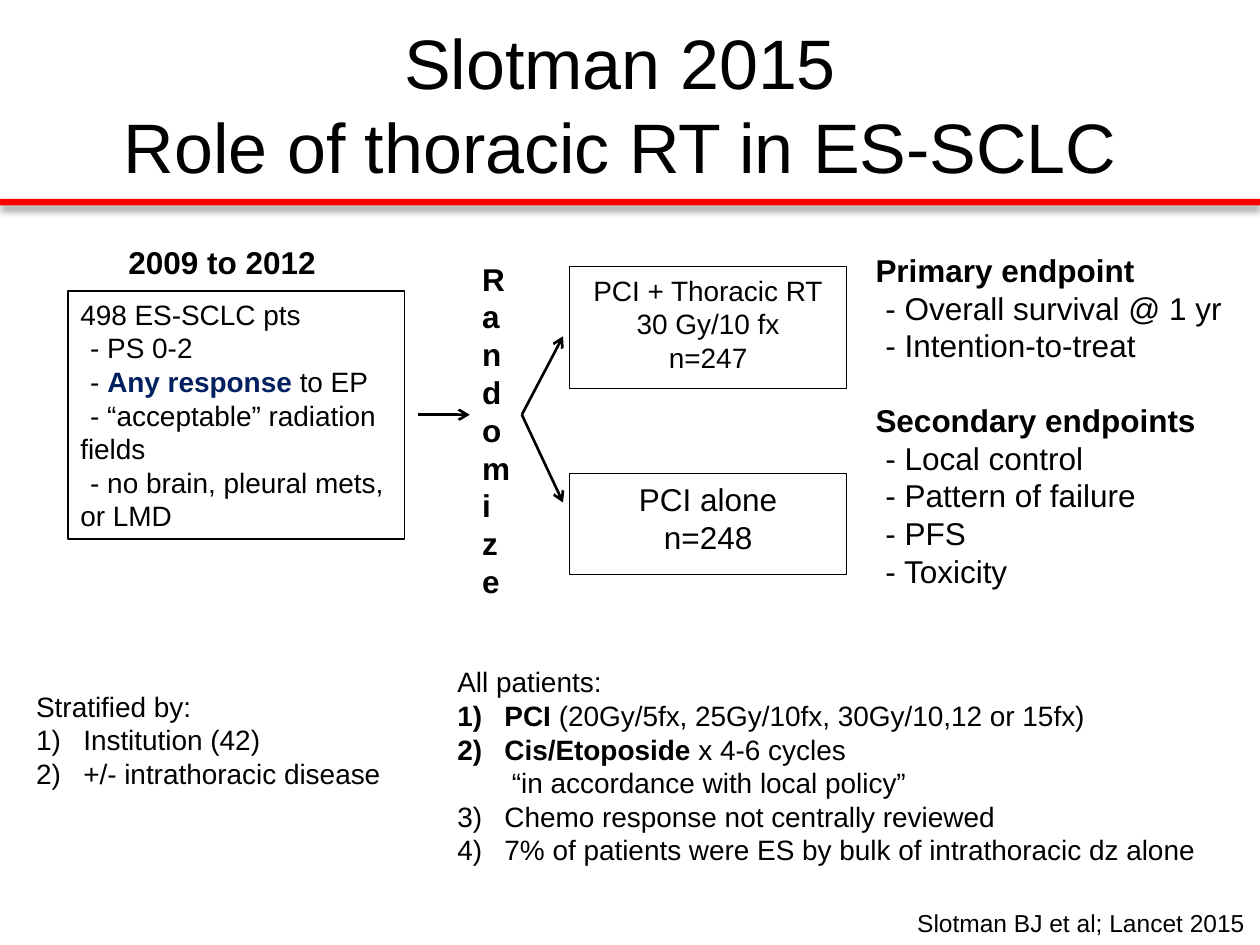
"""Build a slide on the Slotman 2015 trial of thoracic RT in ES-SCLC."""
from lxml.etree import SubElement
from pptx import Presentation
from pptx.dml.color import RGBColor
from pptx.enum.shapes import MSO_CONNECTOR as LINE, MSO_SHAPE as SHAPE
from pptx.enum.text import MSO_ANCHOR as ANCHOR, PP_ALIGN as ALIGN
from pptx.oxml.ns import qn
from pptx.util import Cm, Pt

BLACK = RGBColor(0, 0, 0)
WHITE = RGBColor(255, 255, 255)
RED = RGBColor(255, 0, 0)
NAVY = RGBColor(0, 32, 96)

BOLD = {"bold": True}
KEY = {"bold": True, "color": NAVY}
DASH = {"indent": Cm(0.2)}
QUOTE = {"indent": Cm(1.1)}
NUMBER = {"left": Cm(0.95), "indent": Cm(-0.95), "start": 1}
NUMBER_FROM_3 = {**NUMBER, "start": 3}
SECTION = {"before": Pt(21)}

TITLE = "Slotman 2015\vRole of thoracic RT in ES-SCLC"
TITLE_AREA = (1.07, 0.5, 22.86, 3.18)
RULE_AREA = (0, 4.01, 25.4, 0.13)

PATIENTS = [
    "498 ES-SCLC pts",
    (DASH, "- PS 0-2"),
    (DASH, "- ", ("Any response ", KEY), "to EP"),
    (DASH, "- “acceptable” radiation fields"),
    (DASH, "- no brain, pleural mets, or LMD"),
]
ENDPOINTS = [
    ({}, ("Primary endpoint", BOLD)),
    (DASH, "- Overall survival @ 1 yr"),
    (DASH, "- Intention-to-treat"),
    (SECTION, ("Secondary endpoints", BOLD)),
    (DASH, "- Local control"),
    (DASH, "- Pattern of failure"),
    (DASH, "- PFS"),
    (DASH, "- Toxicity"),
]
ALL_PATIENTS = [
    "All patients:",
    (NUMBER, ("PCI ", BOLD), "(20Gy/5fx, 25Gy/10fx, 30Gy/10,12 or 15fx)"),
    (NUMBER, ("Cis/Etoposide", BOLD), " x 4-6 cycles"),
    (QUOTE, "“in accordance with local policy”"),
    (NUMBER_FROM_3, "Chemo response not centrally reviewed"),
    (NUMBER_FROM_3, "7% of patients were ES by bulk of intrathoracic dz alone"),
]
STRATA = [
    "Stratified by:",
    (NUMBER, "Institution (42)"),
    (NUMBER, "+/- intrathoracic disease"),
]

FRAMED = {"line": BLACK}
ARM = {"line": BLACK, "align": ALIGN.CENTER}
BOXES = [
    ((1.37, 5.87, 6.78, 5), 16, PATIENTS, FRAMED),
    ((11.48, 5.38, 5.59, 2.46), 16, ["PCI + Thoracic RT", "30 Gy/10 fx", "n=247"], ARM),
    ((11.48, 9.55, 5.59, 2.03), 18, ["PCI alone", "n=248"], ARM),
    ((17.4, 4.93, 7.62, 7.19), 18, ENDPOINTS, {"fill": WHITE}),
    ((8.97, 13.28, 15.8, 4.37), 16, ALL_PATIENTS, {}),
    ((0.48, 13.77, 7.67, 2.31), 16, STRATA, {"wrap": False}),
    ((2.34, 4.78, 4.88, 1.02), 18, [({}, ("2009 to 2012", BOLD))], {}),
    ((9.47, 5.11, 0.71, 7.19), 18, [({}, ("Randomize", BOLD))], {}),
    ((18.24, 18.19, 7.16, 0.86), 14, ["Slotman BJ et al; Lancet 2015"], {"wrap": False}),
]

FORK = (10.52, 8.36)
ARROWS = [
    ((8.43, 8.36), (9.47, 8.36)),
    (FORK, (11.35, 6.78)),
    (FORK, (11.35, 10.13)),
]


def cm(values):
    return [Cm(value) for value in values]


def style_span(span, size, bold=False, color=BLACK):
    for name, value in {"name": "Arial", "size": Pt(size), "bold": bold}.items():
        setattr(span.font, name, value)
    span.font.color.rgb = color


def format_para(para, left=0, indent=0, start=None, before=None):
    props = para._p.get_or_add_pPr()
    props.set("marL", str(left))
    props.set("indent", str(indent))
    if before:
        para.space_before = before
    if start:
        bullet = SubElement(props, qn("a:buAutoNum"), type="arabicParenR")
        if start > 1:
            bullet.set("startAt", str(start))


def write(frame, size, lines, align=ALIGN.LEFT):
    for index, line in enumerate(lines):
        para = frame.add_paragraph() if index else frame.paragraphs[0]
        layout, *parts = ({}, line) if isinstance(line, str) else line
        format_para(para, **layout)
        para.alignment = align
        for part in parts:
            text, style = (part, {}) if isinstance(part, str) else part
            span = para.add_run()
            span.text = text
            style_span(span, size, **style)


def add_box(page, area, size, lines, fill=None, line=None, align=ALIGN.LEFT, wrap=True):
    if fill or line:
        box = page.shapes.add_shape(SHAPE.RECTANGLE, *cm(area))
        box.shadow.inherit = False
    else:
        box = page.shapes.add_textbox(*cm(area))
    if fill:
        box.fill.solid()
        box.fill.fore_color.rgb = fill
    else:
        box.fill.background()
    if line:
        box.line.color.rgb = line
        box.line.width = Pt(0.75)
    else:
        box.line.fill.background()
    box.text_frame.word_wrap = wrap
    box.text_frame.vertical_anchor = ANCHOR.TOP
    write(box.text_frame, size, lines, align)


def add_arrow(page, start, end):
    arrow = page.shapes.add_connector(LINE.STRAIGHT, *cm(start + end))
    arrow.line.color.rgb = BLACK
    arrow.line.width = Pt(1.5)
    SubElement(arrow.line._get_or_add_ln(), qn("a:tailEnd"), type="arrow")
    SubElement(arrow._element.spPr, qn("a:effectLst"))


def add_rule(page):
    rule = page.shapes.add_shape(SHAPE.RECTANGLE, *cm(RULE_AREA))
    rule.fill.solid()
    rule.fill.fore_color.rgb = RED
    rule.line.fill.background()
    effects = SubElement(rule._element.spPr, qn("a:effectLst"))
    shadow = SubElement(effects, qn("a:outerShdw"), blurRad=str(Pt(4)),
                        dist=str(Pt(3)), dir="5400000", rotWithShape="0")
    tint = SubElement(shadow, qn("a:srgbClr"), val=str(BLACK))
    SubElement(tint, qn("a:alpha"), val="40000")


def add_title(page):
    title = page.shapes.title
    title.left, title.top, title.width, title.height = cm(TITLE_AREA)
    frame = title.text_frame
    frame.text = TITLE
    frame.vertical_anchor = ANCHOR.MIDDLE
    frame.paragraphs[0].alignment = ALIGN.CENTER
    for span in frame.paragraphs[0].runs:
        style_span(span, 40)


def main():
    deck = Presentation()
    deck.slide_width, deck.slide_height = cm((25.4, 19.05))
    page = deck.slides.add_slide(deck.slide_layouts[5])
    add_title(page)
    add_rule(page)
    for area, size, lines, style in BOXES:
        add_box(page, area, size, lines, **style)
    for start, end in ARROWS:
        add_arrow(page, start, end)
    deck.save("out.pptx")


if __name__ == "__main__":
    main()
